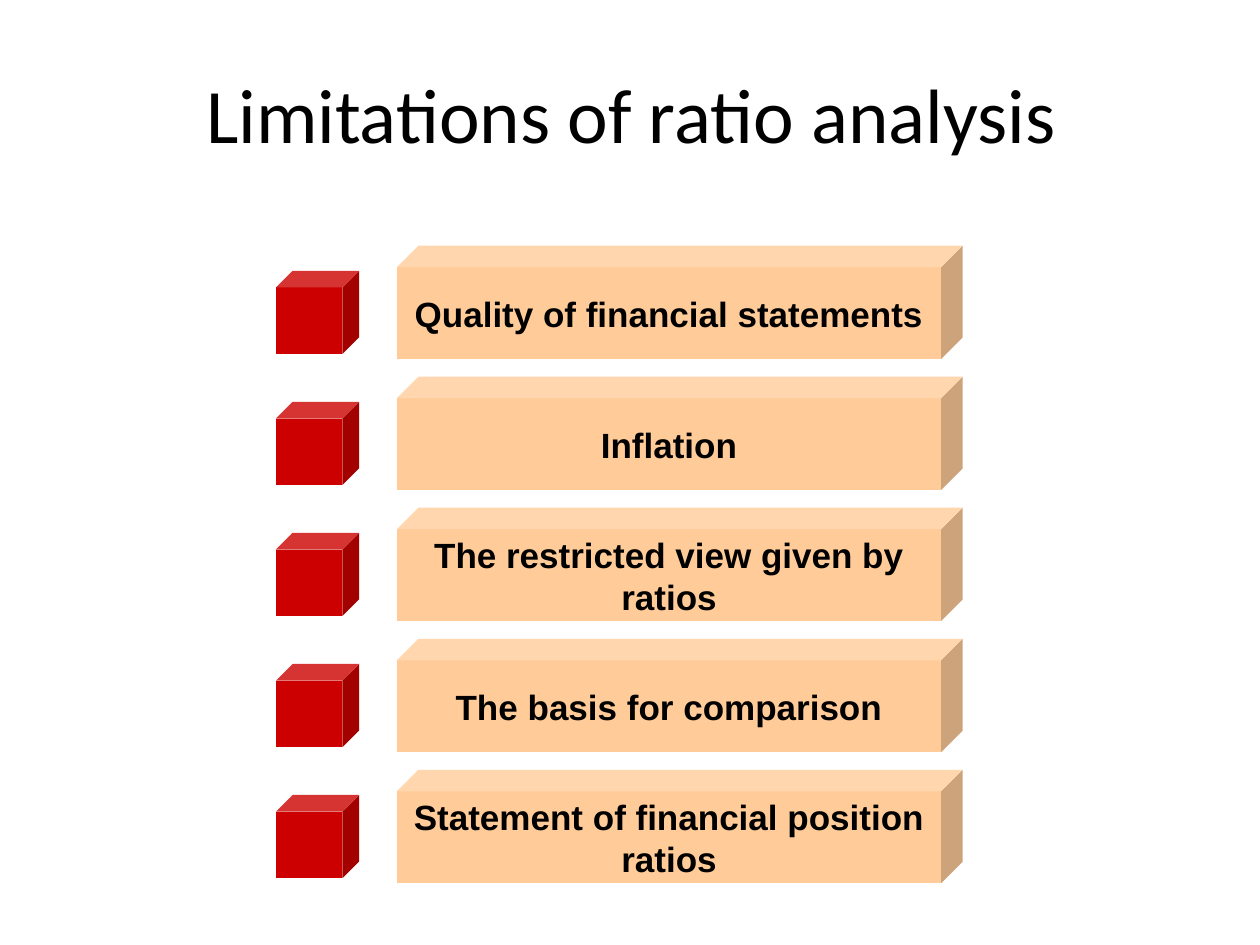
"""Build the slide on the limitations of ratio analysis."""
import pptx
import pptx.dml.color
import pptx.enum.shapes
import pptx.enum.text
import pptx.util

Inches, Pt = pptx.util.Inches, pptx.util.Pt
MIDDLE = pptx.enum.text.MSO_ANCHOR.MIDDLE
CENTER = pptx.enum.text.PP_ALIGN.CENTER


def rgb(value):
    return pptx.dml.color.RGBColor.from_string(value)


def add_cube(s, left, top, width, height, depth, color):
    sp = s.shapes.add_shape(pptx.enum.shapes.MSO_SHAPE.CUBE, Inches(left),
                            Inches(top), Inches(width), Inches(height))
    sp.adjustments[0] = depth
    sp.shadow.inherit = False
    sp.fill.solid()
    sp.fill.fore_color.rgb = rgb(color)
    sp.line.fill.background()
    return sp


prs = pptx.Presentation()
prs.slide_width, prs.slide_height = Inches(10), Inches(7.5)
s = prs.slides.add_slide(prs.slide_layouts[5])

title = s.shapes.title
title.left, title.top = Inches(0.51), Inches(0.27)
title.width, title.height = Inches(9), Inches(1.25)
title.text_frame.text = "Limitations of ratio analysis"
title.text_frame.vertical_anchor = MIDDLE
p = title.text_frame.paragraphs[0]
p.alignment = CENTER
font = p.runs[0].font
font.name, font.size = "Calibri", Pt(44)
font.color.rgb = rgb("000000")

limitations = [
    "Quality of financial statements",
    "Inflation",
    "The restricted view given by ratios",
    "The basis for comparison",
    "Statement of financial position ratios",
]
first_row, row_pitch = 1.95, 1.04
marker_col, bar_col = 2.19, 3.15

for row, limitation in enumerate(limitations):
    top = first_row + row * row_pitch
    add_cube(s, marker_col, top + 0.2, 0.66, 0.66, 0.2, "CC0000")
    bar = add_cube(s, bar_col, top, 4.49, 0.9, 0.19, "FFCC99")
    tf = bar.text_frame
    tf.word_wrap = True
    tf.vertical_anchor = MIDDLE
    tf.margin_top = tf.margin_bottom = 0
    tf.text = limitation
    p = tf.paragraphs[0]
    p.alignment = CENTER
    font = p.runs[0].font
    font.name, font.size, font.bold = "Arial", Pt(20), True
    font.color.rgb = rgb("000000")

prs.save("out.pptx")
